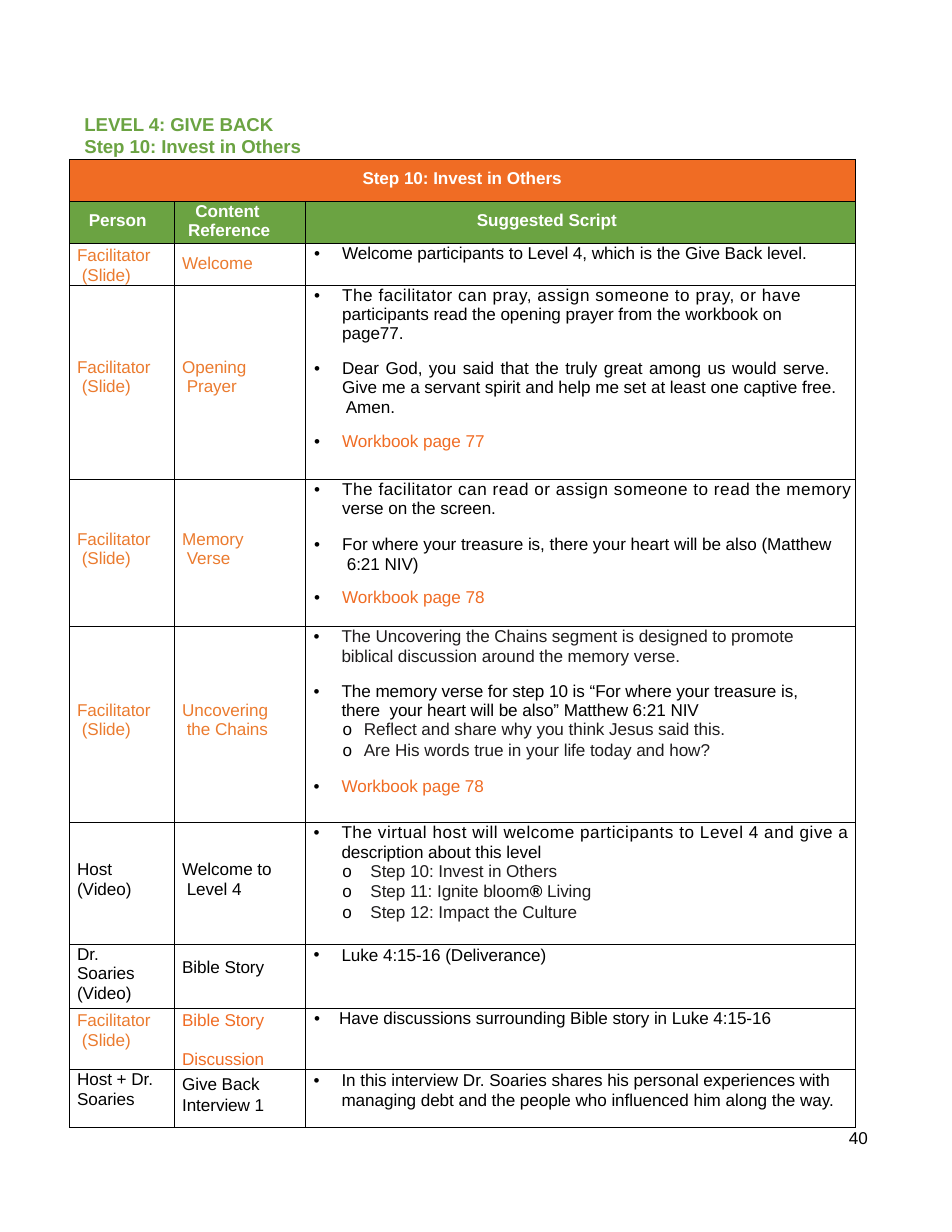
"""Build the facilitator guide page for Step 10, Invest in Others."""
from copy import deepcopy
from dataclasses import dataclass, replace

from lxml import etree
from pptx import Presentation
from pptx.dml.color import RGBColor
from pptx.enum.text import MSO_ANCHOR, MSO_AUTO_SIZE, PP_ALIGN
from pptx.oxml.ns import qn
from pptx.util import Pt

LEFT, CENTER, JUSTIFY = PP_ALIGN.LEFT, PP_ALIGN.CENTER, PP_ALIGN.JUSTIFY
TOP, NO_FIT = MSO_ANCHOR.TOP, MSO_AUTO_SIZE.NONE
FONT = "Arial"
COLORS = {"black": "000000", "ink": "1F1D1E", "white": "FFFFFF", "green": "6BA342",
          "orange": "F06C24", "amber": "EB7B2F"}
TIGHT = -0.05
WIDE = 0.35
COLUMN_WIDTHS = (67.5, 84.5, 353)
ROW_HEIGHTS = (27, 27, 27, 124.5, 95, 126, 78.5, 41, 27, 37.5)


@dataclass(frozen=True)
class Line:
    """One paragraph; a newline in the text is a line break."""
    text: str
    color: str = "black"
    left: float = 5
    indent: float = 0
    bullet: str = ""
    before: float = 0
    spacing: float | None = None
    align: int = LEFT
    bold: bool = False
    size: float = 11
    track: float = TIGHT
    strong: str = ""
    right: float = 0


@dataclass(frozen=True)
class Entry:
    """One table cell: its paragraphs, top inset and fill."""
    lines: tuple[Line, ...]
    top: float = 0
    fill: str = ""


def label(*texts: str, color: str = "black", top: float = 0, spacing: float = 1.02,
          gap: float = 0) -> Entry:
    """Return a cell of the two left columns."""
    return Entry(tuple(Line(text, color, spacing=spacing, before=gap if number else 0)
                       for number, text in enumerate(texts)), top)


def header(*lines: Line, top: float = 6.5, fill: str = "green") -> Entry:
    """Return a filled header cell with bold white text."""
    return Entry(tuple(replace(line, color="white", bold=True) for line in lines), top, fill)


def point(text: str, left: float = 23.4, **options) -> Line:
    """Return a bulleted script paragraph."""
    return Line(text, **{"left": left, "indent": -18, "bullet": "•", "right": 12, **options})


def follow(text: str, left: float = 23.4) -> Line:
    """Return a script paragraph that continues a bullet."""
    return Line(text, left=left, right=12)


def subpoint(text: str, left: float, indent: float, before: float, strong: str = "") -> Line:
    """Return a second-level script paragraph."""
    return Line(text, "ink", left, indent, "o", before, strong=strong)


def add_span(para, text: str, line: Line, color: str, bold: bool):
    """Add one formatted run."""
    span = para.add_run()
    span.text = text
    for name, value in {"name": FONT, "size": Pt(line.size), "bold": bold}.items():
        setattr(span.font, name, value)
    span.font.color.rgb = RGBColor.from_string(COLORS[color])
    properties = span.font._element
    properties.set("spc", str(round(line.track * 100)))
    return properties


def write_line(para, line: Line) -> None:
    """Format a paragraph and fill it with its runs."""
    values = {"alignment": line.align, "space_before": Pt(line.before),
              "line_spacing": Pt(line.spacing) if line.spacing and line.spacing > 5
              else line.spacing}
    for name, value in values.items():
        setattr(para, name, value)
    properties = para._p.get_or_add_pPr()
    for name, value in {"marL": line.left, "marR": line.right, "indent": line.indent}.items():
        properties.set(name, str(int(Pt(value))))
    if line.bullet:
        tint = etree.SubElement(properties, qn("a:buClr"))
        etree.SubElement(tint, qn("a:srgbClr"), val=COLORS["black"])
        etree.SubElement(properties, qn("a:buFont"), typeface=FONT)
        etree.SubElement(properties, qn("a:buChar"), char=line.bullet)
    else:
        etree.SubElement(properties, qn("a:buNone"))
    if line.strong:
        start, end = line.text.split(line.strong)
        add_span(para, start, line, line.color, False)
        add_span(para, line.strong, line, "black", True)
        add_span(para, end, line, line.color, False)
        return
    for number, part in enumerate(line.text.split("\n")):
        if number:
            para.add_line_break()
            para._p[-1].append(deepcopy(look))
        look = add_span(para, part, line, line.color, line.bold)


def write_lines(frame, lines: tuple[Line, ...]) -> None:
    """Write paragraphs into a text frame."""
    for number, line in enumerate(lines):
        write_line(frame.add_paragraph() if number else frame.paragraphs[0], line)


def place(box, left: float, top: float, width: float, height: float, inset: float = 0) -> None:
    """Set the position and the frame format of a text shape."""
    for name, value in {"left": left, "top": top, "width": width, "height": height}.items():
        setattr(box, name, Pt(value))
    for name, value in {"margin_left": 0, "margin_right": 0, "margin_top": Pt(inset),
                        "margin_bottom": 0, "word_wrap": True, "auto_size": NO_FIT,
                        "vertical_anchor": TOP}.items():
        setattr(box.text_frame, name, value)


def fill_cell(cell, entry: Entry) -> None:
    """Set a cell's insets, borders, fill and text."""
    for name, value in {"margin_left": 0, "margin_right": 0, "margin_top": Pt(entry.top),
                        "margin_bottom": 0, "vertical_anchor": TOP}.items():
        setattr(cell, name, value)
    properties = cell._tc.get_or_add_tcPr()
    for side in ("lnL", "lnR", "lnT", "lnB"):
        edge = etree.SubElement(properties, qn(f"a:{side}"), w=str(int(Pt(0.5))))
        paint = etree.SubElement(edge, qn("a:solidFill"))
        etree.SubElement(paint, qn("a:srgbClr"), val=COLORS["black"])
    if entry.fill:
        cell.fill.solid()
        cell.fill.fore_color.rgb = RGBColor.from_string(COLORS[entry.fill])
    else:
        cell.fill.background()
    write_lines(cell.text_frame, entry.lines)


def guide_rows() -> list[tuple[Entry, ...]]:
    """Return the cells of every table row."""
    slide_cue = "Facilitator\n (Slide)"
    blank = Entry((), fill="orange")
    return [
        (header(Line("Step 10: Invest in Others", left=0, align=CENTER), fill="orange"),
         blank, blank),
        (header(Line("Person", left=12.5)),
         header(Line("Content", left=13.5, spacing=12.9), Line("Reference", left=8.8), top=0),
         header(Line("Suggested Script", left=110))),
        (label(slide_cue, color="amber", top=1.4, spacing=12.6),
         label("Welcome", color="amber", top=6.8),
         Entry((point("Welcome participants to Level 4, which is the Give Back level.",
                      spacing=12.8),))),
        (label(slide_cue, color="amber", top=46.5),
         label("Opening\n Prayer", color="amber", top=46.5),
         Entry((point("The facilitator can pray, assign someone to pray, or have",
                      spacing=12.8, track=WIDE),
                follow("participants read the opening prayer from the workbook on \npage77."),
                point("Dear God, you said that the truly great among us would serve.  Give me "
                      "a servant spirit and help me set at least one captive free.  Amen.",
                      align=JUSTIFY, before=10.1, spacing=1.01),
                point("Workbook page 77", color="orange", before=10.2)))),
        (label(slide_cue, color="amber", top=32.5),
         label("Memory\n Verse", color="amber", top=32.5),
         Entry((point("The facilitator can read or assign someone to read the memory",
                      spacing=12.8, track=WIDE, right=0),
                follow("verse on the screen."),
                point("For where your treasure is, there your heart will be also (Matthew"
                      "\n 6:21 NIV)", spacing=12.7, before=10.5, right=0),
                point("Workbook page 78", color="orange", before=9.1)))),
        (label(slide_cue, color="amber", top=47.5),
         label("Uncovering\n the Chains", color="amber", top=47.5),
         Entry((point("The Uncovering the Chains segment is designed to promote", 23,
                      color="ink", spacing=12.8),
                replace(follow("biblical discussion around the memory verse.", 23), color="ink"),
                point("The memory verse for step 10 is “For where your treasure is, there  "
                      "your heart will be also” Matthew 6:21 NIV", 23, before=10.3),
                subpoint("Reflect and share why you think Jesus said this.", 37.4, -13.7, 0.1),
                subpoint("Are His words true in your life today and how?", 37.4, -13.7, 1.1),
                point("Workbook page 78", 23, color="orange", before=11.1)))),
        (label("Host \n(Video)", top=24), label("Welcome to\n Level 4", top=24),
         Entry((point("The virtual host will welcome participants to Level 4 and give a", 23,
                      spacing=12.8, track=WIDE, right=0),
                follow("description about this level", 23),
                subpoint("Step 10: Invest in Others", 41.6, -18, 0.3),
                subpoint("Step 11: Ignite bloom® Living", 41.6, -18, 0.8, "® "),
                subpoint("Step 12: Impact the Culture", 41.6, -18, 1.1)))),
        (label("Dr.", "Soaries", "(Video)"), label("Bible Story", top=8.5),
         Entry((point("Luke 4:15-16 (Deliverance)", 23, spacing=12.8),))),
        (label(slide_cue, color="amber", top=1.1, spacing=12.7),
         label("Bible Story", "Discussion", color="orange", top=1.1, spacing=12.7, gap=12.7),
         Entry((point("Have discussions surrounding Bible story in Luke 4:15-16", 21.4,
                      indent=-16, spacing=12.8),))),
        (label("Host + Dr.", "Soaries", spacing=12.8),
         label("Give Back \nInterview 1", top=2, spacing=1.11),
         Entry((point("In this interview Dr. Soaries shares his personal experiences with \n"
                      "managing debt and the people who influenced him along the way.", 23,
                      spacing=12.7, right=0),), 0.4)),
    ]


def add_guide(page) -> None:
    """Add the script table."""
    table = page.shapes.add_table(len(ROW_HEIGHTS), len(COLUMN_WIDTHS), Pt(44.6), Pt(102.4),
                                  Pt(sum(COLUMN_WIDTHS)), Pt(sum(ROW_HEIGHTS))).table
    table.first_row = table.horz_banding = False
    for column, width in zip(table.columns, COLUMN_WIDTHS):
        column.width = Pt(width)
    for row, height, entries in zip(table.rows, ROW_HEIGHTS, guide_rows()):
        row.height = Pt(height)
        for cell, entry in zip(row.cells, entries):
            fill_cell(cell, entry)
    table.cell(0, 0).merge(table.cell(0, 2))


def main() -> None:
    """Build and save the deck."""
    deck = Presentation()
    deck.slide_width, deck.slide_height = Pt(612), Pt(792)
    page = deck.slides.add_slide(deck.slide_layouts[5])
    number = page.shapes.add_textbox(0, 0, 0, 0)
    place(number, 542.9, 725, 18, 14.4)
    write_lines(number.text_frame, (Line("40", left=2.9),))
    title = page.shapes.title
    place(title, 53.3, 71.3, 142.6, 31, 1)
    write_lines(title.text_frame, tuple(
        Line(text, "green", left=1, bold=True, size=12)
        for text in ("LEVEL 4: GIVE BACK", "Step 10: Invest in Others")))
    add_guide(page)
    deck.save("out.pptx")


if __name__ == "__main__":
    main()
